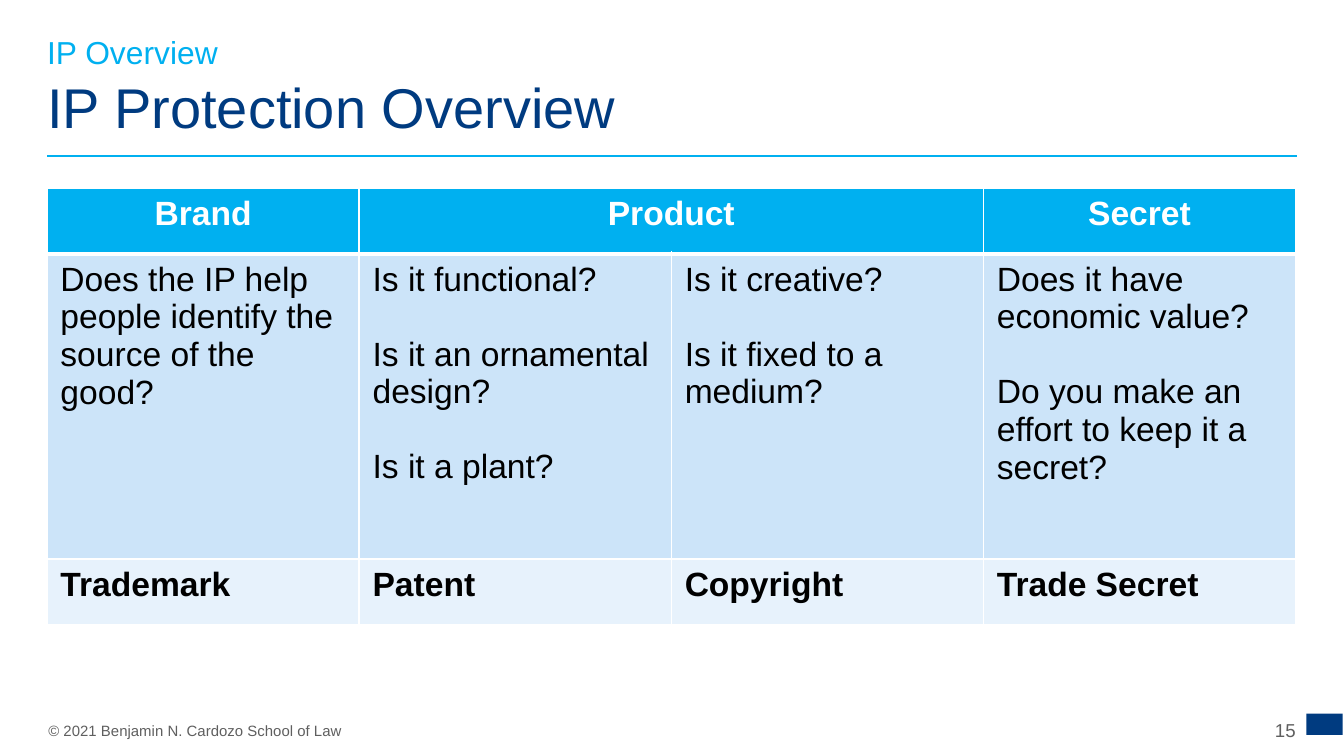
from lxml import etree
from pptx import Presentation
from pptx.dml.color import RGBColor
from pptx.enum.shapes import MSO_CONNECTOR as Connector, MSO_SHAPE as Shape
from pptx.enum.text import MSO_ANCHOR as Anchor, PP_ALIGN as Align
from pptx.oxml.ns import qn
from pptx.util import Inches, Pt

NAVY = RGBColor(0x00, 0x3B, 0x80)
SKY = RGBColor(0x00, 0xB0, 0xF0)
GRAY = RGBColor(0x5F, 0x5F, 0x5F)
BLACK = RGBColor(0x00, 0x00, 0x00)
WHITE = RGBColor(0xFF, 0xFF, 0xFF)
PALE_BLUE = RGBColor(0xCC, 0xE4, 0xF9)
PALER_BLUE = RGBColor(0xE7, 0xF2, 0xFC)

FONT = "Arial"
LEFT, WIDTH = 0.35, 9.29
ROW_HEIGHTS = (0.49, 2.27, 0.49)
QUESTION_GAP = 20

HEADINGS = ("Brand", "Product", "", "Secret")
QUESTIONS = (
    ("Does the IP help people identify the source of the good?",),
    ("Is it functional?", "Is it an ornamental design?", "Is it a plant?"),
    ("Is it creative?", "Is it fixed to a medium?"),
    ("Does it have economic value?", "Do you make an effort to keep it a secret?"),
)
PROTECTIONS = ("Trademark", "Patent", "Copyright", "Trade Secret")


def add_span(para, text, size, color, bold=False):
    span = para.add_run()
    span.text = text
    span.font.name = FONT
    span.font.size = Pt(size)
    span.font.bold = bold
    span.font.color.rgb = color


def add_label(page, box, text, size, color, align=Align.LEFT, anchor=Anchor.TOP, spacing=1.0):
    """Add one line of text in a box without margins."""
    frame = page.shapes.add_textbox(*map(Inches, box)).text_frame
    frame.word_wrap = True
    frame.vertical_anchor = anchor
    frame.margin_left = frame.margin_right = frame.margin_top = frame.margin_bottom = 0
    para = frame.paragraphs[0]
    para.alignment = align
    para.line_spacing = spacing
    add_span(para, text, size, color)


def add_header(page, left, top, width):
    add_label(page, (left, top + 0.12, width, 0.61), "IP Protection Overview", 30, NAVY,
              anchor=Anchor.BOTTOM, spacing=0.85)
    add_label(page, (left, top, width, 0.24), "IP Overview", 17, SKY, spacing=0.75)
    rule_y = Inches(top + 0.85)
    rule = page.shapes.add_connector(Connector.STRAIGHT, Inches(left), rule_y,
                                     Inches(left + width + 0.01), rule_y)
    rule.line.color.rgb = SKY
    rule.line.width = Pt(1)
    etree.SubElement(rule._element.spPr, qn("a:effectLst"))


def add_footer(page, left, top, width):
    add_label(page, (left + 0.01, top + 0.06, 8.57, 0.13),
              "© 2021 Benjamin N. Cardozo School of Law", 8, GRAY)
    add_label(page, (left + width - 0.54, top + 0.04, 0.54, 0.16), "15", 10, GRAY,
              align=Align.RIGHT, anchor=Anchor.MIDDLE)
    block = page.shapes.add_shape(Shape.RECTANGLE, Inches(left + width + 0.08), Inches(top),
                                  Inches(0.27), Inches(0.16))
    block.shadow.inherit = False
    block.fill.solid()
    block.fill.fore_color.rgb = NAVY
    block.line.fill.background()


def set_border(cell, side, width):
    line = etree.SubElement(cell._tc.get_or_add_tcPr(), qn(f"a:ln{side}"), w=str(Pt(width)))
    fill = etree.SubElement(line, qn("a:solidFill"))
    etree.SubElement(fill, qn("a:srgbClr"), val=str(WHITE))


def style_cell(cell, fill, top_border, bottom_border):
    for side, width in (("L", 1), ("R", 1), ("T", top_border), ("B", bottom_border)):
        set_border(cell, side, width)
    cell.fill.solid()
    cell.fill.fore_color.rgb = fill


def fill_cell(cell, lines, color, bold, align):
    frame = cell.text_frame
    for index, line in enumerate(lines):
        para = frame.add_paragraph() if index else frame.paragraphs[0]
        para.alignment = align
        if index:
            para.space_before = Pt(QUESTION_GAP)
        add_span(para, line, 18, color, bold)


def add_protection_table(page, left, top, width):
    columns = len(QUESTIONS)
    table = page.shapes.add_table(len(ROW_HEIGHTS), columns, Inches(left), Inches(top),
                                  Inches(width), Inches(sum(ROW_HEIGHTS))).table
    for column in table.columns:
        column.width = Inches(width / columns)
    for row, height in zip(table.rows, ROW_HEIGHTS):
        row.height = Inches(height)

    # Each row: cell texts, fill, text colour, bold, alignment, top and bottom border
    rows = (
        ([(text,) for text in HEADINGS], SKY, WHITE, True, Align.CENTER, 1, 3),
        (QUESTIONS, PALE_BLUE, BLACK, False, Align.LEFT, 3, 1),
        ([(text,) for text in PROTECTIONS], PALER_BLUE, BLACK, True, Align.LEFT, 1, 1),
    )
    for row, (texts, fill, color, bold, align, top_border, bottom_border) in enumerate(rows):
        for column, lines in enumerate(texts):
            cell = table.cell(row, column)
            style_cell(cell, fill, top_border, bottom_border)
            if any(lines):
                fill_cell(cell, lines, color, bold, align)
    table.cell(0, 1).merge(table.cell(0, 2))


def main():
    deck = Presentation()
    deck.slide_width = Inches(10)
    deck.slide_height = deck.slide_width * 9 // 16
    page = deck.slides.add_slide(deck.slide_layouts[6])
    add_header(page, LEFT, 0.31, WIDTH)
    add_protection_table(page, LEFT, 1.4, WIDTH)
    add_footer(page, LEFT, 5.31, WIDTH)
    deck.save("out.pptx")


if __name__ == "__main__":
    main()
